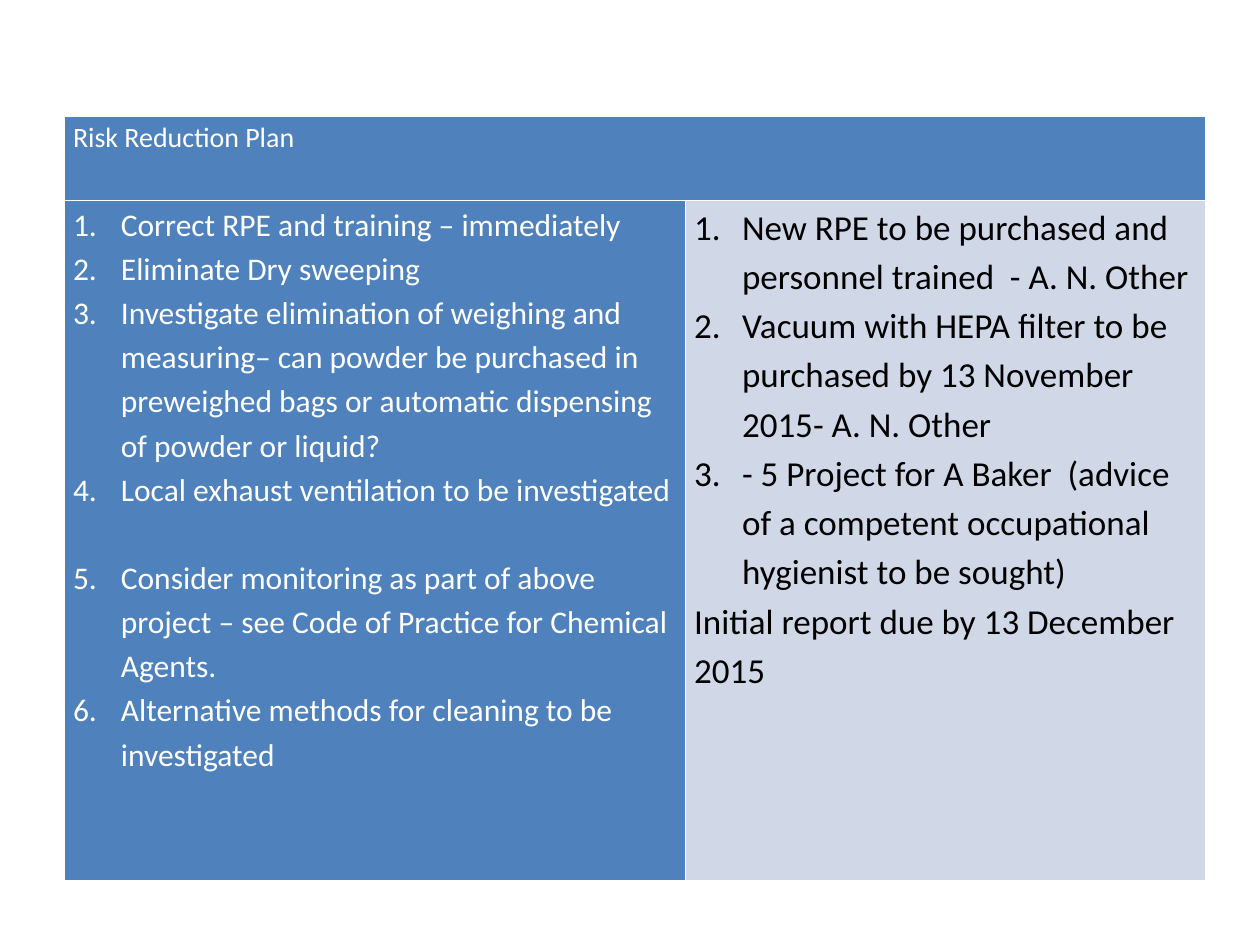
from dataclasses import dataclass

from lxml import etree
from pptx import Presentation
from pptx.dml.color import RGBColor
from pptx.oxml.ns import qn
from pptx.util import Inches, Pt

HEADING = "Risk Reduction Plan"
MEASURES = [
    "Correct RPE and training – immediately",
    "Eliminate Dry sweeping",
    "Investigate elimination of weighing and measuring– can powder be "
    "purchased in preweighed bags or automatic dispensing of powder or liquid?",
    "Local exhaust ventilation to be investigated",
    "Consider monitoring as part of above project – see Code of Practice "
    "for Chemical Agents.",
    "Alternative methods for cleaning to be investigated",
]
ACTIONS = [
    "New RPE to be purchased and personnel trained  - A. N. Other",
    "Vacuum with HEPA filter to be purchased by 13 November 2015- A. N. Other",
    "- 5 Project for A Baker  (advice of a competent occupational hygienist "
    "to be sought)",
]
DEADLINE = "Initial report due by 13 December 2015"
GAP_AFTER = {MEASURES[3]: 25}

LEFT, TOP = 0.51, 0.92
COLUMN_WIDTHS = (4.93, 4.13)
ROW_HEIGHTS = (0.67, 5.4)


@dataclass(frozen=True)
class Theme:
    font: str = "Calibri"
    heading_size: int = 16
    measure_size: int = 18
    action_size: int = 20
    line_spacing: float = 1.15
    blue: str = "4F81BD"
    pale: str = "D0D8E8"
    white: str = "FFFFFF"
    black: str = "000000"
    border: float = 1
    inset: float = 0.07
    indent: float = 0.38


THEME = Theme()


def number_paragraph(paragraph):
    properties = paragraph._p.get_or_add_pPr()
    properties.set("marL", str(Inches(THEME.indent)))
    properties.set("indent", str(-Inches(THEME.indent)))
    etree.SubElement(properties, qn("a:buFont"), typeface="+mj-lt")
    etree.SubElement(properties, qn("a:buAutoNum"), type="arabicPeriod")


def border_cell(cell):
    """Draw all four edges; they must precede the cell's fill in the XML."""
    properties = cell._tc.get_or_add_tcPr()
    for position, edge in enumerate(("lnL", "lnR", "lnT", "lnB")):
        line = etree.Element(qn(f"a:{edge}"), w=str(Pt(THEME.border)))
        fill = etree.SubElement(line, qn("a:solidFill"))
        etree.SubElement(fill, qn("a:srgbClr"), val=THEME.white)
        properties.insert(position, line)


def style_cell(cell, color):
    cell.margin_left = cell.margin_right = Inches(THEME.inset)
    cell.margin_top = cell.margin_bottom = 0
    cell.fill.solid()
    cell.fill.fore_color.rgb = RGBColor.from_string(color)
    border_cell(cell)


def write_cell(cell, numbered, plain, size, color):
    """Write the numbered items, then the plain paragraphs."""
    for index, text in enumerate(numbered + plain):
        frame = cell.text_frame
        paragraph = frame.add_paragraph() if index else frame.paragraphs[0]
        paragraph.line_spacing = THEME.line_spacing
        if text in GAP_AFTER:
            paragraph.space_after = Pt(GAP_AFTER[text])
        if index < len(numbered):
            number_paragraph(paragraph)
        paragraph.font.size = Pt(size)
        run = paragraph.add_run()
        run.text = text
        run.font.name = THEME.font
        run.font.size = Pt(size)
        run.font.bold = False
        run.font.color.rgb = RGBColor.from_string(color)


def main():
    deck = Presentation()
    deck.slide_width, deck.slide_height = Inches(10), Inches(7.5)
    slide = deck.slides.add_slide(deck.slide_layouts[6])
    plan = slide.shapes.add_table(
        len(ROW_HEIGHTS), len(COLUMN_WIDTHS), Inches(LEFT), Inches(TOP),
        Inches(sum(COLUMN_WIDTHS)), Inches(sum(ROW_HEIGHTS)),
    ).table
    for column, width in zip(plan.columns, COLUMN_WIDTHS):
        column.width = Inches(width)
    for row, height in zip(plan.rows, ROW_HEIGHTS):
        row.height = Inches(height)

    heading, measures, actions = plan.cell(0, 0), plan.cell(1, 0), plan.cell(1, 1)
    heading.merge(plan.cell(0, 1))
    for cell, color in (
        (heading, THEME.blue), (plan.cell(0, 1), THEME.blue),
        (measures, THEME.blue), (actions, THEME.pale),
    ):
        style_cell(cell, color)

    write_cell(heading, [], [HEADING], THEME.heading_size, THEME.white)
    write_cell(measures, MEASURES, [], THEME.measure_size, THEME.white)
    write_cell(actions, ACTIONS, [DEADLINE], THEME.action_size, THEME.black)
    deck.save("out.pptx")


if __name__ == "__main__":
    main()
